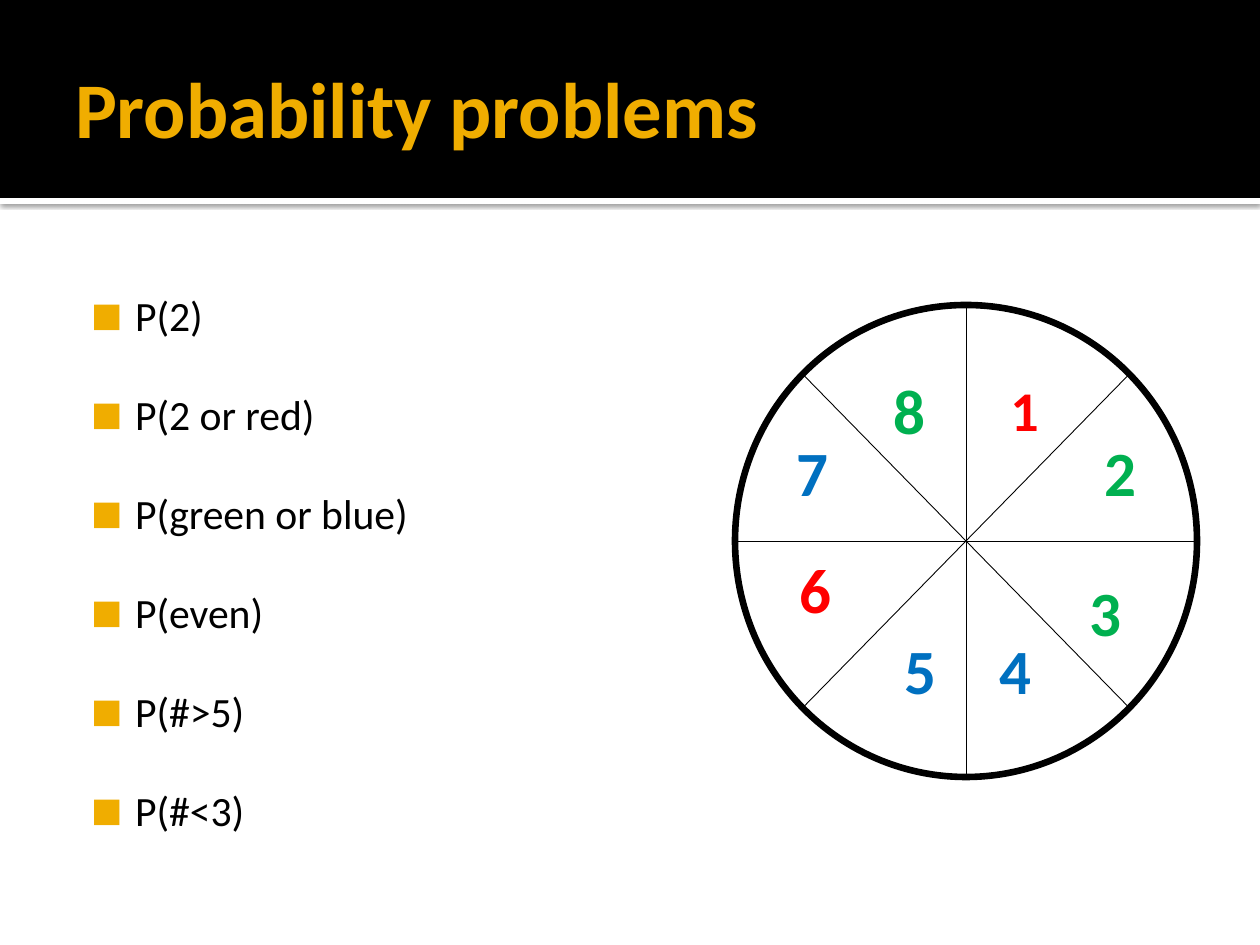
"""Build the probability problems slide with a numbered spinner."""
import math

from lxml import etree
from pptx import Presentation
from pptx.dml.color import RGBColor
from pptx.enum.shapes import MSO_CONNECTOR, MSO_SHAPE
from pptx.enum.text import MSO_ANCHOR, MSO_AUTO_SIZE, PP_ALIGN
from pptx.oxml import parse_xml
from pptx.oxml.ns import nsdecls, qn
from pptx.util import Emu, Pt

STRAIGHT = MSO_CONNECTOR.STRAIGHT
RECTANGLE, OVAL = MSO_SHAPE.RECTANGLE, MSO_SHAPE.OVAL
TOP, MIDDLE = MSO_ANCHOR.TOP, MSO_ANCHOR.MIDDLE
LEFT = PP_ALIGN.LEFT
NO_AUTOFIT = MSO_AUTO_SIZE.NONE

SCALE = 914400 / 126
FONT = "Calibri"
BLACK, WHITE, GOLD = "000000", "FFFFFF", "F0AD00"
RED, GREEN, BLUE = "FF0000", "00B050", "0070C0"

TITLE = "Probability problems"
PROBLEMS = ["P(2)", "P(2 or red)", "P(green or blue)", "P(even)", "P(#>5)", "P(#<3)"]
NUMBERS = [
    ("1", RED, 32, 998, 369),
    ("2", GREEN, 36, 1092, 427),
    ("3", GREEN, 36, 1077, 567),
    ("4", BLUE, 36, 987, 625),
    ("5", BLUE, 36, 892, 625),
    ("6", RED, 36, 787, 544),
    ("7", BLUE, 36, 784, 427),
    ("8", GREEN, 36, 881, 365),
]
BAND_BOX = (0, 0, 1260, 198)
RULE_BOX = (0, 198, 1260, 6)
TITLE_BOX = (63, 21, 1134, 173)
BODY_BOX = (63, 278, 554, 552)
WHEEL_BOX = (735, 305, 462, 472)
NUMBER_SIZE = (105, 89)
SPOKES = 4

SHADOW = (
    f'<a:effectLst {nsdecls("a")}><a:outerShdw blurRad="31750" dist="10160" dir="5400000">'
    '<a:srgbClr val="000000"><a:alpha val="60000"/></a:srgbClr></a:outerShdw></a:effectLst>'
)


def px(*lengths):
    return [Emu(round(length * SCALE)) for length in lengths]


def color(value):
    return RGBColor.from_string(value)


def place(shape, box):
    shape.left, shape.top, shape.width, shape.height = px(*box)


def format_text(shape, size, font_color, bold, anchor, insets):
    frame = shape.text_frame
    frame.word_wrap = True
    frame.auto_size = NO_AUTOFIT
    frame.vertical_anchor = anchor
    frame.margin_left, frame.margin_top, frame.margin_right, frame.margin_bottom = px(*insets)
    for paragraph in frame.paragraphs:
        paragraph.alignment = LEFT
        for run in paragraph.runs:
            run.font.name = FONT
            run.font.size = Pt(size)
            run.font.bold = bold
            run.font.color.rgb = color(font_color)


def add_filled(slide, kind, box, fill):
    shape = slide.shapes.add_shape(kind, *px(*box))
    shape.shadow.inherit = False
    shape.fill.solid()
    shape.fill.fore_color.rgb = color(fill)
    shape.line.fill.background()
    return shape


def add_header(slide):
    band = add_filled(slide, RECTANGLE, BAND_BOX, BLACK)
    rule = add_filled(slide, RECTANGLE, RULE_BOX, WHITE)
    properties = rule._element.spPr
    properties.replace(properties.find(qn("a:effectLst")), parse_xml(SHADOW))
    for shape in (band, rule):
        slide.shapes._spTree.insert(2, shape._element)


def add_bullet(paragraph):
    properties = paragraph._p.get_or_add_pPr()
    margin, indent = px(60, -44)
    properties.set("marL", str(margin))
    properties.set("indent", str(indent))
    bullet_color = etree.SubElement(properties, qn("a:buClr"))
    etree.SubElement(bullet_color, qn("a:srgbClr"), val=GOLD)
    etree.SubElement(properties, qn("a:buSzPct"), val="80000")
    etree.SubElement(properties, qn("a:buFont"), typeface=FONT)
    etree.SubElement(properties, qn("a:buChar"), char="■")


def fill_placeholders(slide):
    title, body = slide.shapes.title, slide.placeholders[1]
    place(title, TITLE_BOX)
    title.text_frame.text = TITLE
    format_text(title, 45, GOLD, True, MIDDLE, (12, 6, 6, 6))
    place(body, BODY_BOX)
    body.text_frame.text = "\n".join(PROBLEMS)
    format_text(body, 23.8, BLACK, False, TOP, (12, 12, 12, 6))
    for paragraph in body.text_frame.paragraphs:
        paragraph.space_before = Pt(0)
        paragraph.space_after = Pt(28)
        add_bullet(paragraph)


def add_spoke(slide, ends):
    spoke = slide.shapes.add_connector(STRAIGHT, *px(*ends))
    spoke.line.color.rgb = color(BLACK)
    spoke.line.width = Pt(0.5)
    etree.SubElement(spoke._element.spPr, qn("a:effectLst"))


def add_wheel(slide):
    wheel = add_filled(slide, OVAL, WHEEL_BOX, WHITE)
    wheel.line.color.rgb = color(BLACK)
    wheel.line.width = Pt(3.78)
    left, top, width, height = WHEEL_BOX
    center_x, center_y = left + width / 2, top + height / 2
    for index in range(SPOKES):
        angle = math.pi * index / SPOKES
        reach_x = width / 2 * math.cos(angle)
        reach_y = height / 2 * math.sin(angle)
        add_spoke(slide, (center_x - reach_x, center_y - reach_y,
                          center_x + reach_x, center_y + reach_y))
    for text, font_color, size, x, y in NUMBERS:
        number = slide.shapes.add_textbox(*px(x, y, *NUMBER_SIZE))
        number.text_frame.text = text
        format_text(number, size, font_color, True, TOP, (12.6, 6.3, 12.6, 6.3))


def main():
    presentation = Presentation()
    presentation.slide_width, presentation.slide_height = px(1260, 945)
    slide = presentation.slides.add_slide(presentation.slide_layouts[1])
    fill_placeholders(slide)
    add_header(slide)
    add_wheel(slide)
    presentation.save("out.pptx")


if __name__ == "__main__":
    main()
